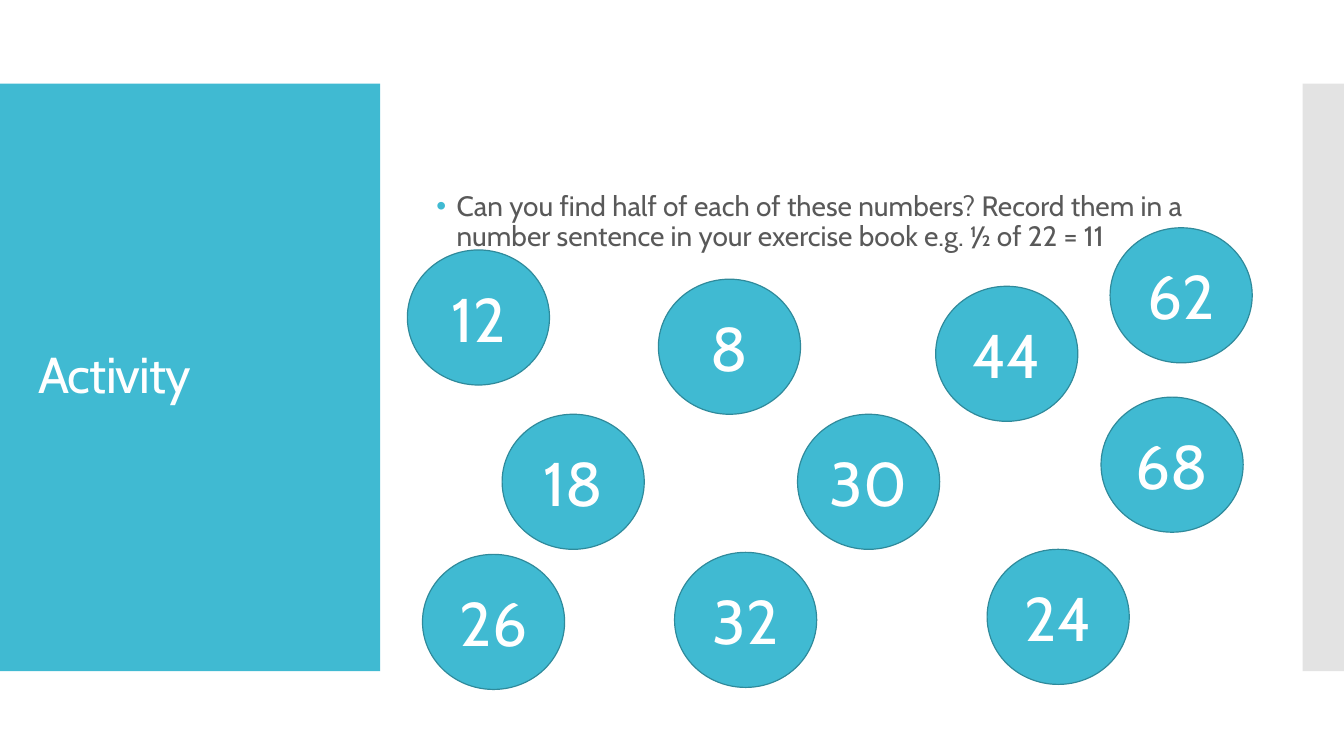
"""Build the halving activity slide."""
from dataclasses import dataclass

from lxml.etree import SubElement
from pptx import Presentation
from pptx.dml.color import RGBColor
from pptx.enum.shapes import MSO_SHAPE
from pptx.enum.text import MSO_ANCHOR, MSO_AUTO_SIZE, PP_ALIGN
from pptx.oxml.ns import qn
from pptx.shapes.autoshape import Shape
from pptx.slide import Slide
from pptx.text.text import TextFrame
from pptx.util import Inches, Pt

TEAL = RGBColor(0x40, 0xBA, 0xD2)
RIM = RGBColor(0x2F, 0x8A, 0x9B)
GREY = RGBColor(0xC8, 0xC8, 0xC8)
DARK = RGBColor(0x59, 0x59, 0x59)
WHITE = RGBColor(0xFF, 0xFF, 0xFF)
FONT = "Cabin"
TASK = ("Can you find half of each of these numbers? Record them in a "
        "number sentence in your exercise book e.g. ½ of 22 = 11")


@dataclass
class Panel:
    left: float
    width: float
    fill: RGBColor


@dataclass
class Ball:
    number: int
    left: float
    top: float


PANELS = [Panel(0, 3.77, TEAL), Panel(12.92, 0.42, GREY)]
BALLS = [
    Ball(12, 4.04, 2.48), Ball(8, 6.53, 2.77), Ball(18, 4.98, 4.11),
    Ball(24, 9.79, 5.45), Ball(32, 6.69, 5.48), Ball(26, 4.19, 5.5),
    Ball(30, 7.91, 4.11), Ball(68, 10.92, 3.94), Ball(44, 9.28, 2.84),
    Ball(62, 11.01, 2.26),
]


def write(frame: TextFrame, text: str, size: int, color: RGBColor,
          align: PP_ALIGN, space: float = 1.0) -> None:
    """Fill a frame with one styled paragraph."""
    frame.text = text
    frame.word_wrap = True
    frame.auto_size = MSO_AUTO_SIZE.NONE
    frame.vertical_anchor = MSO_ANCHOR.MIDDLE
    para = frame.paragraphs[0]
    para.alignment = align
    para.line_spacing = space
    font = para.runs[0].font
    font.name, font.size = FONT, Pt(size)
    font.color.rgb = color


def add_panel(slide: Slide, panel: Panel) -> Shape:
    """Draw a side panel."""
    shape = slide.shapes.add_shape(
        MSO_SHAPE.RECTANGLE, Inches(panel.left), Inches(0.83),
        Inches(panel.width), Inches(5.83))
    shape.shadow.inherit = False
    shape.fill.solid()
    shape.fill.fore_color.rgb = panel.fill
    shape.line.fill.background()
    return shape


def add_ball(slide: Slide, ball: Ball) -> None:
    """Draw a numbered ball."""
    shape = slide.shapes.add_shape(
        MSO_SHAPE.OVAL, Inches(ball.left), Inches(ball.top),
        Inches(1.41), Inches(1.34))
    shape.shadow.inherit = False
    shape.fill.solid()
    shape.fill.fore_color.rgb = TEAL
    shape.line.color.rgb = RIM
    shape.line.width = Pt(0.85)
    write(shape.text_frame, str(ball.number), 44, WHITE, PP_ALIGN.CENTER)


def set_title(slide: Slide) -> None:
    """Place the title in front of its panel."""
    title = slide.shapes.title
    title.left, title.top = Inches(0.28), Inches(1.23)
    title.width, title.height = Inches(3.22), Inches(5.03)
    write(title.text_frame, "Activity", 36, WHITE, PP_ALIGN.LEFT, 0.9)
    run = title.text_frame.paragraphs[0].runs[0]
    run.font._element.set("spc", "-60")
    slide.shapes._spTree.append(title._element)


def add_task(slide: Slide) -> None:
    """Add the bulleted task."""
    box = slide.shapes.add_textbox(
        Inches(4.23), Inches(0.94), Inches(8), Inches(5.6))
    frame = box.text_frame
    write(frame, TASK, 20, DARK, PP_ALIGN.LEFT, 0.9)
    frame.vertical_anchor = MSO_ANCHOR.TOP
    frame.margin_top = Inches(0.97)
    props = frame.paragraphs[0]._p.get_or_add_pPr()
    props.set("marL", str(Inches(0.2)))
    props.set("indent", str(Inches(-0.2)))
    tint = SubElement(props, qn("a:buClr"))
    SubElement(tint, qn("a:srgbClr")).set("val", str(TEAL))
    SubElement(props, qn("a:buFont")).set("typeface", "Arial")
    SubElement(props, qn("a:buChar")).set("char", "•")


def main() -> None:
    """Build and save the slide."""
    deck = Presentation()
    deck.slide_width, deck.slide_height = Inches(13.33), Inches(7.5)
    slide = deck.slides.add_slide(deck.slide_layouts[5])
    _, strip = [add_panel(slide, panel) for panel in PANELS]
    tint = strip.fill._xPr.find(".//" + qn("a:srgbClr"))
    SubElement(tint, qn("a:alpha")).set("val", "50000")
    set_title(slide)
    add_task(slide)
    for ball in BALLS:
        add_ball(slide, ball)
    deck.save("out.pptx")


if __name__ == "__main__":
    main()
